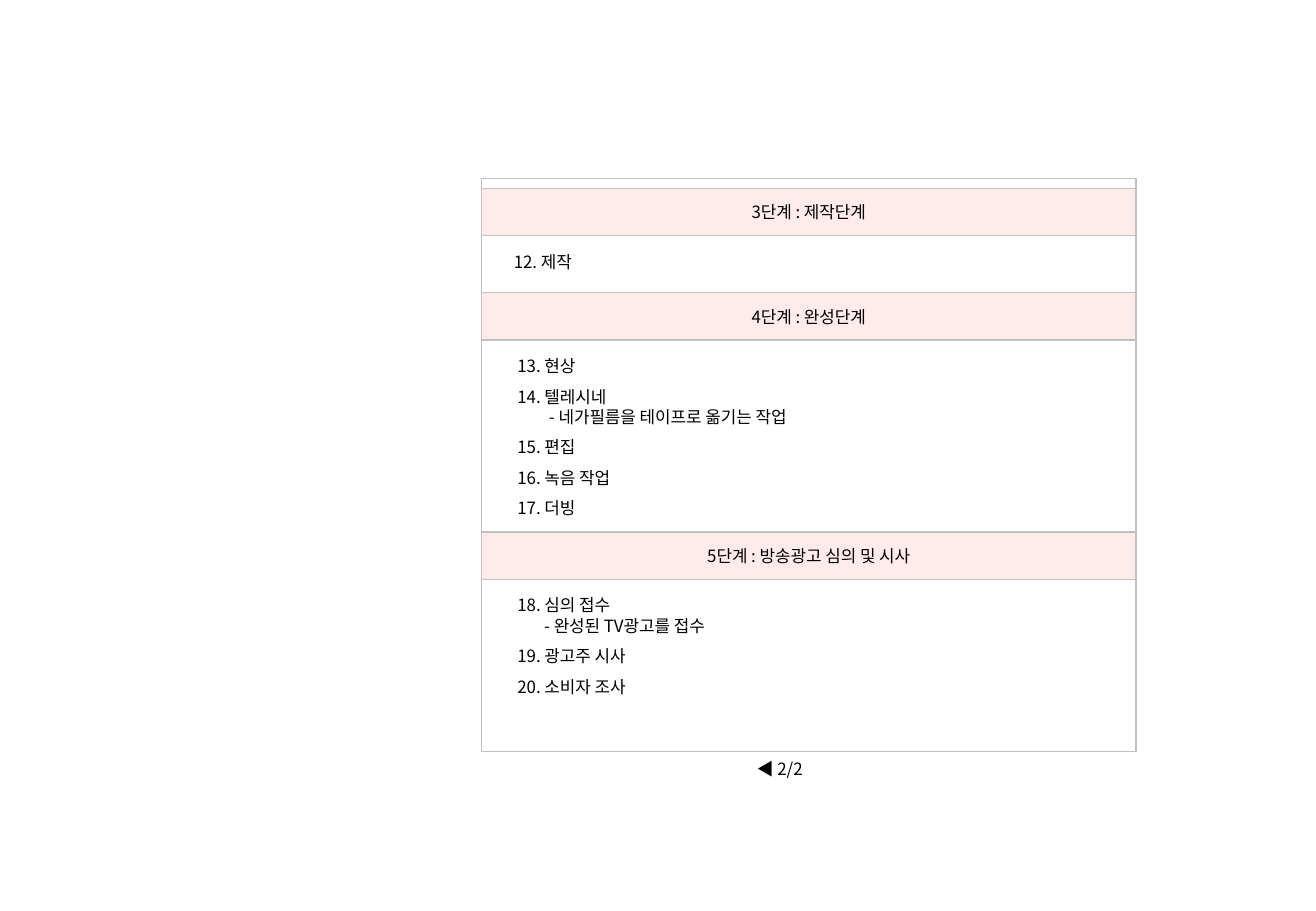
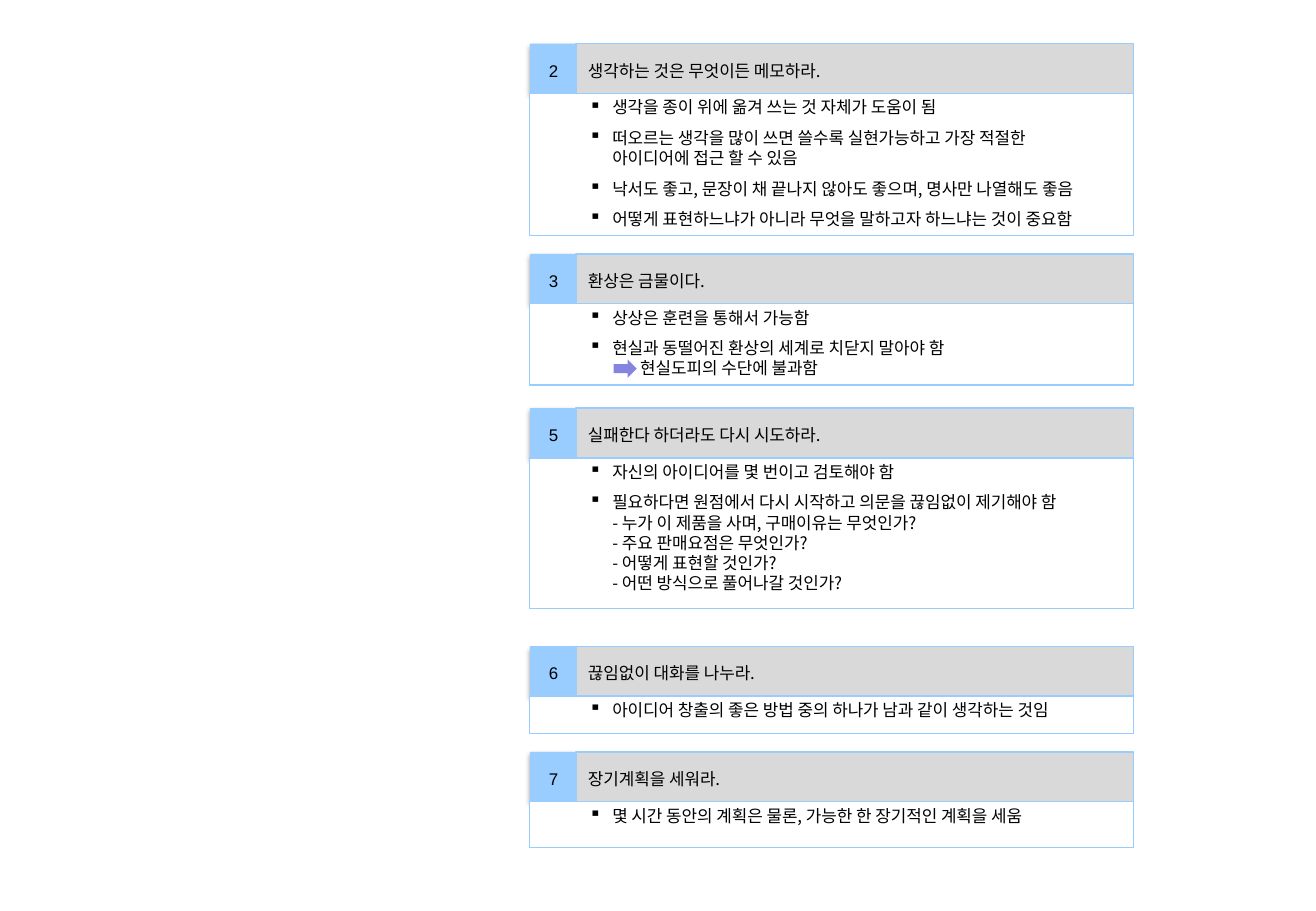
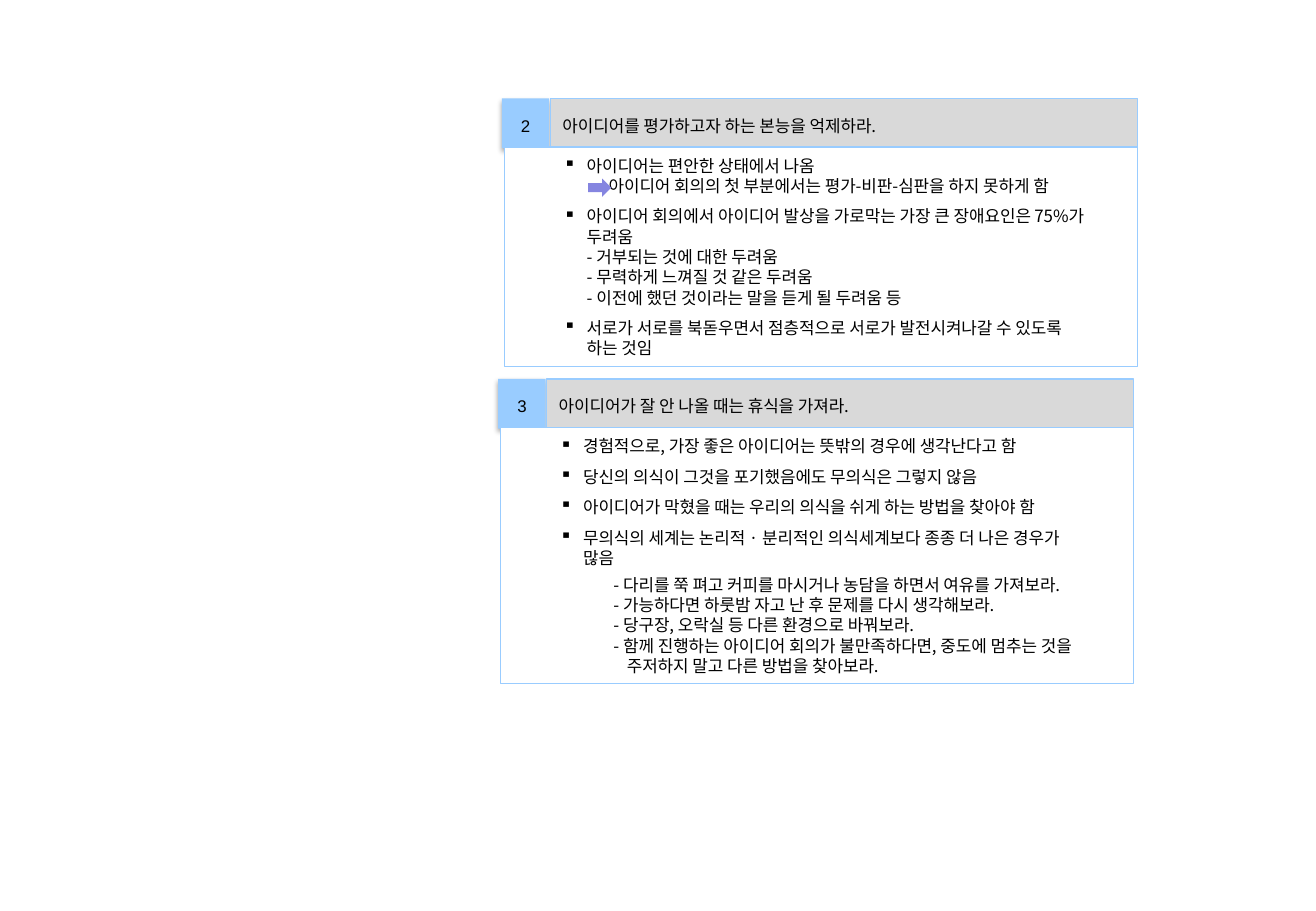
from collections import namedtuple

from lxml.etree import SubElement
from pptx import Presentation
from pptx.dml.color import RGBColor
from pptx.enum.shapes import MSO_SHAPE
from pptx.enum.text import MSO_ANCHOR, PP_ALIGN
from pptx.oxml.ns import qn
from pptx.util import Inches, Pt

COLORS = {
    "text": "000000",
    "paper": "FFFFFF",
    "frame": "C0C0C0",
    "stage": "FFEBEB",
    "number": "99CCFF",
    "title": "D9D9D9",
    "arrow": "8585E0",
    "shadow": "000000",
}
BODY_FONT = "Noto Sans CJK KR"
NUMBER_FONT = "Arial"
TEXT_SIZE = 10
BAND_HEIGHT = 0.39
TITLE_HEIGHT = 0.41
NUMBER_WIDTH = 0.39
BULLET_INDENT = 0.19

Box = namedtuple("Box", "left top width height")
Line = namedtuple("Line", "text left first before bullet")
CardStyle = namedtuple("CardStyle", "number_shift body_top text_top")

CLOSE_CARD = CardStyle(0, 0.41, 0.39)
ROOMY_CARD = CardStyle(-0.02, 0.4, 0.42)


def color(name):
    return RGBColor.from_string(COLORS[name])


def inches(box):
    return [Inches(length) for length in box]


def step(text):
    return Line(text, 0, 0, 6, False)


def bullet(text):
    return Line(text, BULLET_INDENT, -BULLET_INDENT, 6, True)


def detail(text, left, first=0):
    return Line(text, left, first, 0, False)


def write(paragraph, text, font_name=BODY_FONT):
    for index, part in enumerate(text.split("\n")):
        if index:
            paragraph.add_line_break()
        run = paragraph.add_run()
        run.text = part
        run.font.size = Pt(TEXT_SIZE)
        run.font.color.rgb = color("text")
        run.font.name = font_name
        SubElement(run.font._element, qn("a:ea"), typeface=font_name)


def add_lines(slide, box, lines):
    frame = slide.shapes.add_textbox(*inches(box)).text_frame
    frame.word_wrap = True
    for index, line in enumerate(lines):
        paragraph = frame.add_paragraph() if index else frame.paragraphs[0]
        properties = paragraph._p.get_or_add_pPr()
        properties.set("marL", str(Inches(line.left)))
        properties.set("indent", str(Inches(line.first)))
        if line.bullet:
            SubElement(properties, qn("a:buChar"), char="▪")
        if index:
            paragraph.space_before = Pt(line.before)
        write(paragraph, line.text)


def add_block(slide, box, fill, line=None, preset=MSO_SHAPE.RECTANGLE):
    block = slide.shapes.add_shape(preset, *inches(box))
    block.shadow.inherit = False
    block.fill.solid()
    block.fill.fore_color.rgb = color(fill)
    if line:
        block.line.color.rgb = color(line)
        block.line.width = Pt(0.75)
    else:
        block.line.fill.background()
    return block


def label(block, text, align, font_name=BODY_FONT, spacing=1.0):
    frame = block.text_frame
    frame.word_wrap = True
    frame.vertical_anchor = MSO_ANCHOR.MIDDLE
    paragraph = frame.paragraphs[0]
    paragraph.alignment = align
    paragraph.line_spacing = spacing
    write(paragraph, text, font_name)


def cast_shadow(block):
    effects = block._element.spPr.find(qn("a:effectLst"))
    shadow = SubElement(effects, qn("a:outerShdw"), blurRad=str(Pt(3.1)),
                        dist=str(Pt(1.8)), dir="5400000", rotWithShape="0")
    tint = SubElement(shadow, qn("a:srgbClr"), val=COLORS["shadow"])
    SubElement(tint, qn("a:alpha"), val="35000")


def add_stage(slide, box, title, steps, indent=0.2):
    band = add_block(slide, box._replace(height=BAND_HEIGHT), "stage", "frame")
    label(band, title, PP_ALIGN.CENTER)
    add_lines(slide, Box(box.left + indent, box.top + 0.47, 5.03,
                         box.height - 0.47), steps)


def add_card(slide, box, style, number, title, lines, arrow_top=None):
    left, top, width, height = box
    badge = add_block(slide, Box(left + style.number_shift, top, NUMBER_WIDTH,
                                 TITLE_HEIGHT), "number")
    cast_shadow(badge)
    label(badge, number, PP_ALIGN.CENTER, NUMBER_FONT, 1.2)
    heading = add_block(slide, Box(left + 0.38, top, width - 0.38, TITLE_HEIGHT),
                        "title", "number")
    label(heading, title, PP_ALIGN.LEFT, spacing=1.2)
    add_block(slide, Box(left, top + style.body_top, width,
                         height - style.body_top), "paper", "number")
    add_lines(slide, Box(left + 0.39, top + style.text_top, width - 0.25,
                         height - style.text_top), lines)
    if arrow_top is not None:
        add_block(slide, Box(left + 0.69, top + arrow_top, 0.19, 0.15), "arrow",
                  preset=MSO_SHAPE.RIGHT_ARROW)


def build_production_stages(slide):
    panel = Box(3.96, 1.47, 5.39, 4.72)
    add_block(slide, panel, "paper", "frame")
    add_lines(slide, Box(6.13, 6.2, 0.8, 0.27), [step("◀ 2/2")])
    add_stage(slide, panel._replace(top=1.55, height=0.86), "3단계 : 제작단계",
              [step("12. 제작")], 0.17)
    add_stage(slide, panel._replace(top=2.41, height=1.97), "4단계 : 완성단계", [
        step("13. 현상"),
        step("14. 텔레시네"),
        detail("- 네가필름을 테이프로 옮기는 작업", 0.26),
        step("15. 편집"),
        step("16. 녹음 작업"),
        step("17. 더빙"),
    ])
    add_stage(slide, panel._replace(top=4.38, height=1.81),
              "5단계 : 방송광고 심의 및 시사", [
        step("18. 심의 접수"),
        detail("- 완성된 TV광고를 접수", 0.22),
        step("19. 광고주 시사"),
        step("20. 소비자 조사"),
    ])


def build_idea_habits(slide):
    cards = [
        (0.36, 1.58, "2", "생각하는 것은 무엇이든 메모하라.", [
            bullet("생각을 종이 위에 옮겨 쓰는 것 자체가 도움이 됨"),
            bullet("떠오르는 생각을 많이 쓰면 쓸수록 실현가능하고 가장 적절한\n"
                   "아이디어에 접근 할 수 있음"),
            bullet("낙서도 좋고, 문장이 채 끝나지 않아도 좋으며, 명사만 나열해도 좋음"),
            bullet("어떻게 표현하느냐가 아니라 무엇을 말하고자 하느냐는 것이 중요함"),
        ], None),
        (2.09, 1.08, "3", "환상은 금물이다.", [
            bullet("상상은 훈련을 통해서 가능함"),
            bullet("현실과 동떨어진 환상의 세계로 치닫지 말아야 함"),
            detail("현실도피의 수단에 불과함", 0.42),
        ], 0.87),
        (3.36, 1.65, "5", "실패한다 하더라도 다시 시도하라.", [
            bullet("자신의 아이디어를 몇 번이고 검토해야 함"),
            bullet("필요하다면 원점에서 다시 시작하고 의문을 끊임없이 제기해야 함\n"
                   "- 누가 이 제품을 사며, 구매이유는 무엇인가?\n"
                   "- 주요 판매요점은 무엇인가?\n"
                   "- 어떻게 표현할 것인가?\n"
                   "- 어떤 방식으로 풀어나갈 것인가?"),
        ], None),
        (5.32, 0.72, "6", "끊임없이 대화를 나누라.", [
            bullet("아이디어 창출의 좋은 방법 중의 하나가 남과 같이 생각하는 것임"),
        ], None),
        (6.19, 0.79, "7", "장기계획을 세워라.", [
            bullet("몇 시간 동안의 계획은 물론, 가능한 한 장기적인 계획을 세움"),
        ], None),
    ]
    for top, height, number, title, lines, arrow_top in cards:
        add_card(slide, Box(4.36, top, 4.97, height), CLOSE_CARD, number, title,
                 lines, arrow_top)


def build_idea_meetings(slide):
    add_card(slide, Box(4.15, 0.81, 5.21, 2.21), ROOMY_CARD, "2",
             "아이디어를 평가하고자 하는 본능을 억제하라.", [
        bullet("아이디어는 편안한 상태에서 나옴"),
        detail("아이디어 회의의 첫 부분에서는 평가-비판-심판을 하지 못하게 함", 0.37),
        bullet("아이디어 회의에서 아이디어 발상을 가로막는 가장 큰 장애요인은 75%가\n"
               "두려움\n"
               "- 거부되는 것에 대한 두려움\n"
               "- 무력하게 느껴질 것 같은 두려움\n"
               "- 이전에 했던 것이라는 말을 듣게 될 두려움 등"),
        bullet("서로가 서로를 북돋우면서 점층적으로 서로가 발전시켜나갈 수 있도록\n"
               "하는 것임"),
    ], 0.66)
    rest = Box(4.12, 3.12, 5.21, 2.51)
    add_card(slide, rest, ROOMY_CARD, "3",
             "아이디어가 잘 안 나올 때는 휴식을 가져라.", [
        bullet("경험적으로, 가장 좋은 아이디어는 뜻밖의 경우에 생각난다고 함"),
        bullet("당신의 의식이 그것을 포기했음에도 무의식은 그렇지 않음"),
        bullet("아이디어가 막혔을 때는 우리의 의식을 쉬게 하는 방법을 찾아야 함"),
        bullet("무의식의 세계는 논리적 · 분리적인 의식세계보다 종종 더 나은 경우가\n"
               "많음"),
    ])
    advice = [
        "- 다리를 쭉 펴고 커피를 마시거나 농담을 하면서 여유를 가져보라.",
        "- 가능하다면 하룻밤 자고 난 후 문제를 다시 생각해보라.",
        "- 당구장, 오락실 등 다른 환경으로 바꿔보라.",
        "- 함께 진행하는 아이디어 회의가 불만족하다면, 중도에 멈추는 것을\n"
        "주저하지 말고 다른 방법을 찾아보라.",
    ]
    add_lines(slide, Box(rest.left + 0.83, rest.top + 1.56, 4.55, 0.94),
              [detail(text, 0.11, -0.11) for text in advice])


def main():
    deck = Presentation()
    deck.slide_width = Inches(10.83)
    deck.slide_height = Inches(7.5)
    for build in (build_production_stages, build_idea_habits, build_idea_meetings):
        build(deck.slides.add_slide(deck.slide_layouts[6]))
    deck.save("out.pptx")


if __name__ == "__main__":
    main()
